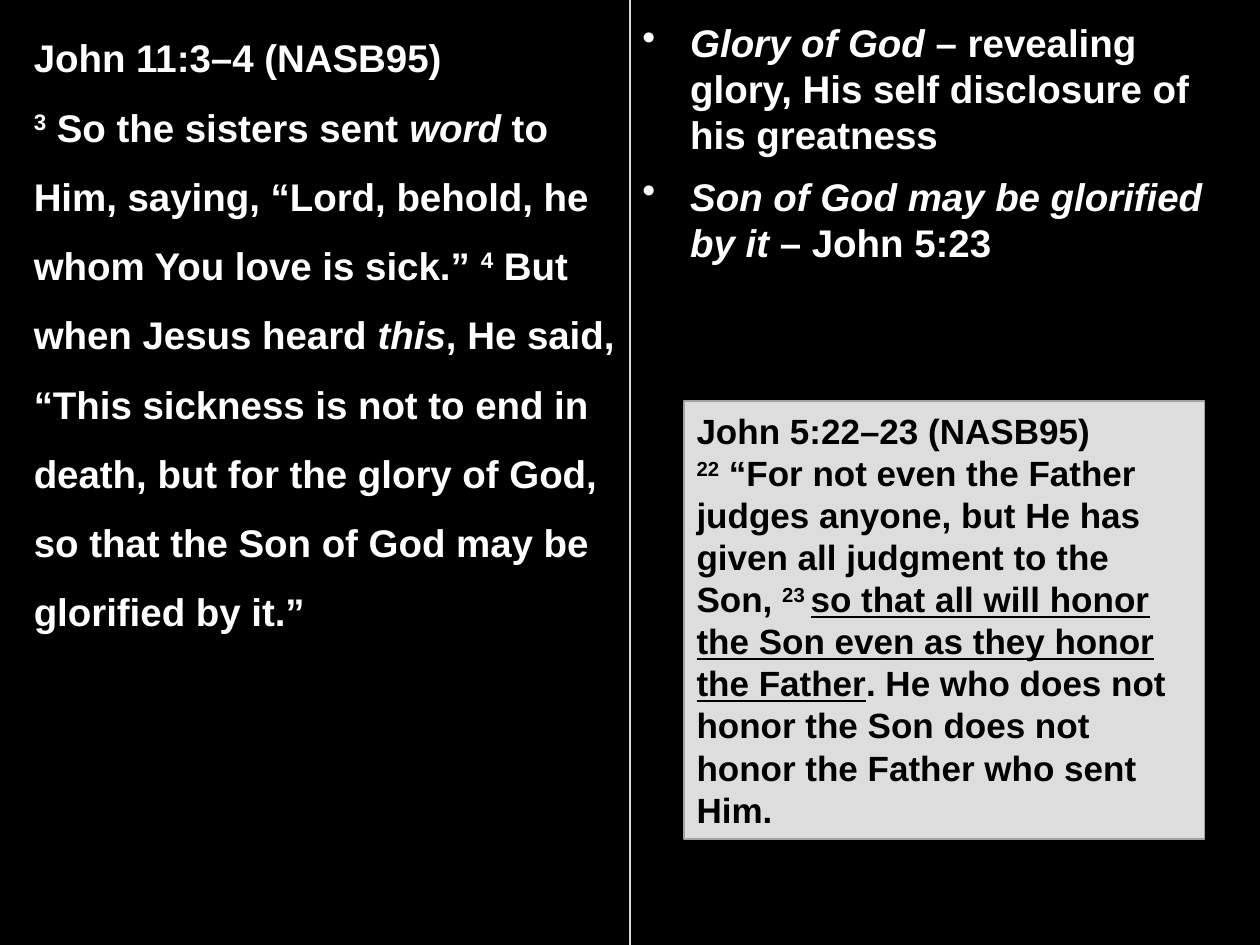
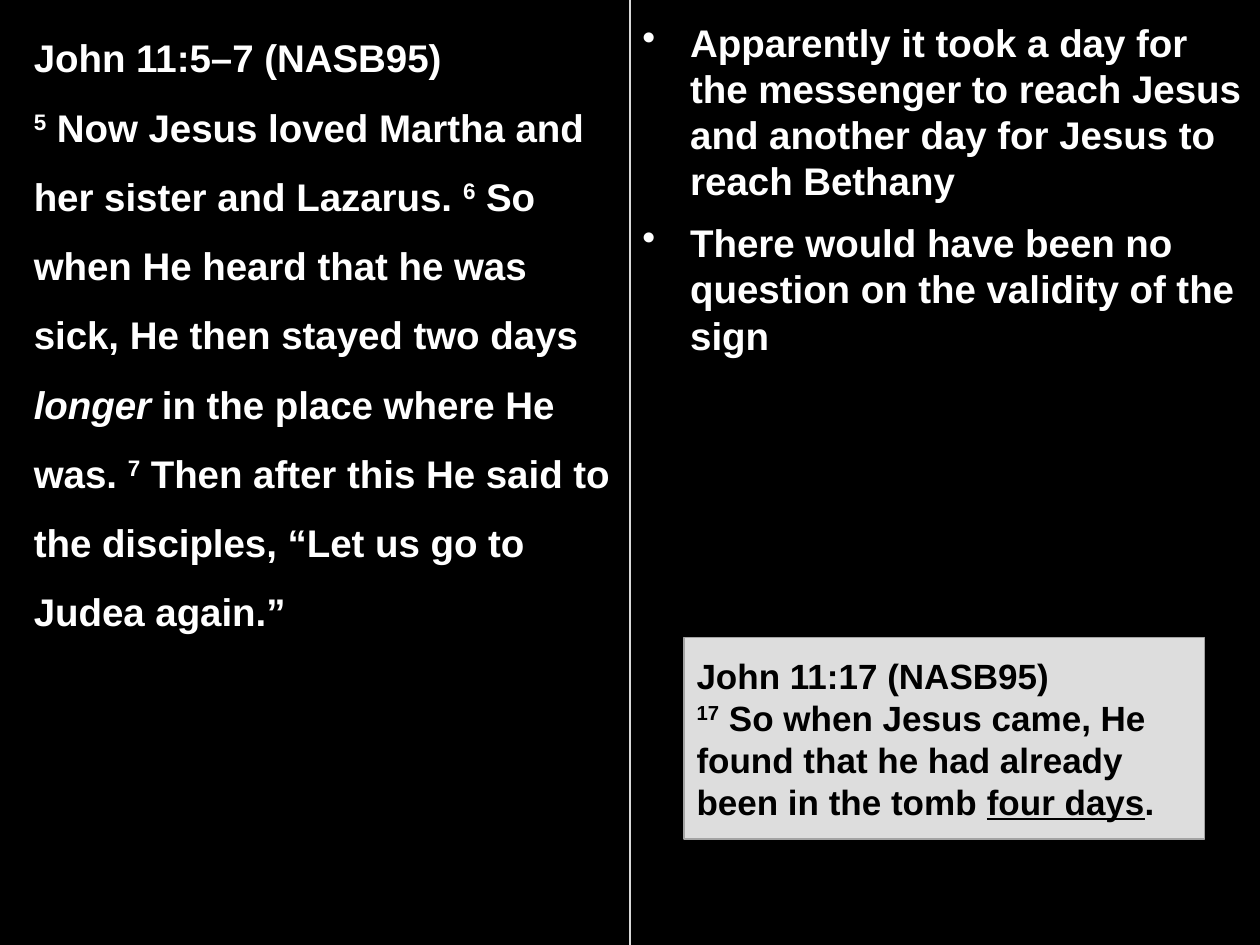
from dataclasses import dataclass

from lxml import etree
from pptx import Presentation
from pptx.dml.color import RGBColor
from pptx.enum import shapes, text
from pptx.oxml import ns
from pptx.util import Inches, Pt


@dataclass(frozen=True)
class Theme:
    font: str = "Arial"
    background: RGBColor = RGBColor(0, 0, 0)
    light_text: RGBColor = RGBColor(255, 255, 255)
    dark_text: RGBColor = RGBColor(0, 0, 0)
    divider: RGBColor = RGBColor(0xD8, 0xD8, 0xD8)
    panel: RGBColor = RGBColor(0xDD, 0xDD, 0xDD)
    panel_edge: RGBColor = RGBColor(0xA3, 0xA3, 0xA3)
    body_size: int = 22
    panel_size: int = 20


THEME = Theme()
SUP, ITALIC, UNDERLINE = "superscript", "italic", "underline"

# A paragraph is a list of spans: plain text, or (text, style).
# Each note gives its box height and its paragraph.
PAGES = [
    {
        "passage": [
            ["John 11:3–4 (NASB95)"],
            [("3", SUP), " So the sisters sent ", ("word", ITALIC),
             " to Him, saying, “Lord, behold, he whom You love is sick.” ",
             ("4", SUP), " But when Jesus heard ", ("this", ITALIC),
             ", He said, “This sickness is not to end in death, but for the "
             "glory of God, so that the Son of God may be glorified by it.”"],
        ],
        "notes": [
            (1.21, [("Glory of God ", ITALIC),
                    "– revealing glory, His self disclosure of his greatness"]),
            (0.84, [("Son of God may be glorified by it ", ITALIC),
                    "– John 5:23"]),
        ],
        "panel_height": 3.48,
        "panel": [
            ["John 5:22–23 (NASB95)"],
            [("22", SUP),
             " “For not even the Father judges anyone, but He has given all "
             "judgment to the Son, ", ("23 ", SUP),
             ("so that all will honor the Son even as they honor the Father",
              UNDERLINE),
             ". He who does not honor the Son does not honor the Father "
             "who sent Him."],
        ],
    },
    {
        "passage": [
            ["John 11:5–7 (NASB95)"],
            [("5", SUP), " Now Jesus loved Martha and her sister and Lazarus. ",
             ("6", SUP),
             " So when He heard that he was sick, He then stayed two days ",
             ("longer", ITALIC), " in the place where He was. ", ("7", SUP),
             " Then after this He said to the disciples, “Let us go to "
             "Judea again.”"],
        ],
        "notes": [
            (1.58, ["Apparently it took a day for the messenger to reach Jesus "
                    "and another day for Jesus to reach Bethany"]),
            (1.21, ["There would have been no question on the validity of "
                    "the sign"]),
        ],
        "panel_height": 1.6,
        "panel": [
            ["John 11:17 (NASB95)"],
            [("17", SUP),
             " So when Jesus came, He found that he had already been in the "
             "tomb ", ("four days", UNDERLINE), "."],
        ],
    },
]

WIDTH, HEIGHT = 10, 7.5
MIDDLE = WIDTH / 2
TOP = 0.04
NOTE_GAP = 0.01
NOTE_INDENT = 0.38
PANEL_LEFT, PANEL_WIDTH, PANEL_BOTTOM = 5.43, 4.13, 6.66


def write(frame, paragraphs, size, color, spacing=None, bullet=False):
    frame.word_wrap = True
    for index, spans in enumerate(paragraphs):
        para = frame.paragraphs[0] if index == 0 else frame.add_paragraph()
        para.alignment = text.PP_ALIGN.LEFT
        if spacing:
            para.line_spacing = spacing
        if bullet:
            add_bullet(para)
        para.font.name = THEME.font
        para.font.size = Pt(size)
        para.font.bold = True
        para.font.color.rgb = color
        for item in spans:
            words, style = (item, None) if isinstance(item, str) else item
            span = para.add_run()
            span.text = words
            if style == SUP:
                span.font._element.set("baseline", "30000")
            elif style == ITALIC:
                span.font.italic = True
            elif style == UNDERLINE:
                span.font.underline = True


def add_bullet(para):
    props = para._p.get_or_add_pPr()
    props.set("marL", str(Inches(NOTE_INDENT)))
    props.set("indent", str(-Inches(NOTE_INDENT)))
    etree.SubElement(props, ns.qn("a:buChar")).set("char", "•")


def add_text(page, left, top, width, height, paragraphs, **options):
    box = page.shapes.add_textbox(*map(Inches, (left, top, width, height)))
    write(box.text_frame, paragraphs, THEME.body_size, THEME.light_text, **options)
    return box


def add_divider(page):
    line = page.shapes.add_connector(
        shapes.MSO_CONNECTOR.STRAIGHT,
        Inches(MIDDLE), 0, Inches(MIDDLE), Inches(HEIGHT))
    line.line.color.rgb = THEME.divider
    line.line.width = Pt(0.75)
    etree.SubElement(line._element.spPr, ns.qn("a:effectLst"))


def add_notes(page, notes):
    top = TOP
    for height, spans in notes:
        box = add_text(page, MIDDLE, top, MIDDLE, height, [spans], bullet=True)
        box.text_frame.margin_top = Inches(0.11)
        top += height + NOTE_GAP


def add_panel(page, height, paragraphs):
    """Place a grey cross-reference panel on the common bottom edge."""
    panel = page.shapes.add_shape(
        shapes.MSO_SHAPE.RECTANGLE,
        *map(Inches, (PANEL_LEFT, PANEL_BOTTOM - height, PANEL_WIDTH, height)))
    panel.shadow.inherit = False
    panel.fill.solid()
    panel.fill.fore_color.rgb = THEME.panel
    panel.line.color.rgb = THEME.panel_edge
    panel.line.width = Pt(1)
    panel.text_frame.vertical_anchor = text.MSO_ANCHOR.MIDDLE
    write(panel.text_frame, paragraphs, THEME.panel_size, THEME.dark_text)


def main():
    deck = Presentation()
    deck.slide_width, deck.slide_height = Inches(WIDTH), Inches(HEIGHT)
    backdrop = deck.slide_master.background.fill
    backdrop.solid()
    backdrop.fore_color.rgb = THEME.background
    blank = deck.slide_layouts.get_by_name("Blank")
    for content in PAGES:
        page = deck.slides.add_slide(blank)
        add_text(page, 0.17, TOP, 4.83, 5.1, content["passage"], spacing=1.5)
        add_divider(page)
        add_notes(page, content["notes"])
        add_panel(page, content["panel_height"], content["panel"])
    deck.save("out.pptx")


if __name__ == "__main__":
    main()
